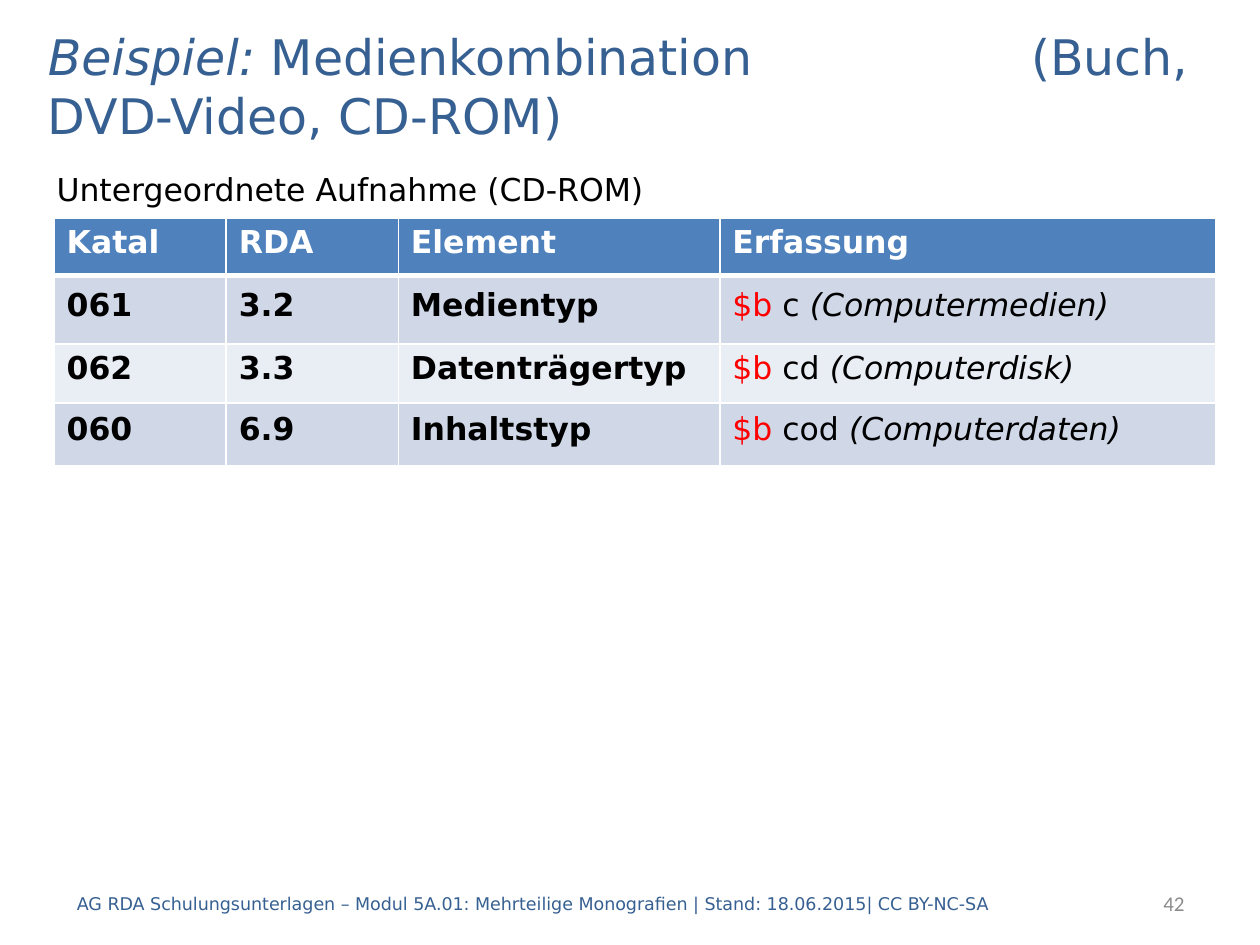
from dataclasses import dataclass

from lxml.etree import SubElement
from pptx import Presentation
from pptx.dml.color import RGBColor
from pptx.enum.shapes import MSO_SHAPE as ShapeKind
from pptx.enum.text import MSO_ANCHOR as Anchor, PP_ALIGN as Align
from pptx.oxml.ns import qn
from pptx.util import Cm, Pt

COLORS = {
    "title": "376092",
    "number": "8C8C8C",
    "header": "4F81BD",
    "odd_row": "D0D8E8",
    "even_row": "E9EDF4",
    "white": "FFFFFF",
    "black": "000000",
    "subfield": "FF0000",
}
TITLE_TAB = Cm(19.82)
COLUMN_WIDTHS = (3.47, 3.47, 6.48, 10)
ROW_HEIGHTS = (1.17, 1.37, 1.19, 1.27)
HEADERS = ("Katal", "RDA", "Element", "Erfassung")


@dataclass(frozen=True)
class TextRun:
    text: str
    color: str = "black"
    size: float = 18
    bold: bool = False
    italic: bool = False
    font: str = "DejaVu Sans"


@dataclass(frozen=True)
class Label:
    run: TextRun
    box: tuple[float, float, float, float]
    anchor: Anchor = Anchor.MIDDLE
    align: Align = Align.LEFT
    fill: str | None = None


@dataclass(frozen=True)
class Entry:
    field: str
    rule: str
    element: str
    code: str
    meaning: str


LABELS = (
    Label(TextRun("AG RDA Schulungsunterlagen – Modul 5A.01: Mehrteilige Monografien"
                  " | Stand: 18.06.2015| CC BY-NC-SA", "title", 10),
          (1.3, 17.7, 21.21, 1.02)),
    Label(TextRun("42", "number", 12, font="Calibri"),
          (20.09, 17.7, 4.04, 1.02), align=Align.RIGHT),
    Label(TextRun("Untergeordnete Aufnahme (CD-ROM)"),
          (0.89, 3.3, 13.61, 1.02), anchor=Anchor.TOP, fill="white"),
)
ENTRIES = (
    Entry("061", "3.2", "Medientyp", "c", "(Computermedien)"),
    Entry("062", "3.3", "Datenträgertyp", "cd", "(Computerdisk)"),
    Entry("060", "6.9", "Inhaltstyp", "cod", "(Computerdaten)"),
)


def rgb(name: str) -> RGBColor:
    return RGBColor.from_string(COLORS[name])


def set_attributes(target, values: dict) -> None:
    for name, value in values.items():
        setattr(target, name, value)


def add_runs(paragraph, runs) -> None:
    for item in runs:
        run = paragraph.add_run()
        run.text = item.text
        set_attributes(run.font, {"name": item.font, "size": Pt(item.size),
                                  "bold": item.bold, "italic": item.italic})
        run.font.color.rgb = rgb(item.color)


def add_label(slide, label: Label) -> None:
    """Add a text box, or a rectangle when the label has a fill."""
    box = map(Cm, label.box)
    if label.fill:
        shape = slide.shapes.add_shape(ShapeKind.RECTANGLE, *box)
        shape.shadow.inherit = False
        shape.fill.solid()
        shape.fill.fore_color.rgb = rgb(label.fill)
        shape.line.fill.background()
    else:
        shape = slide.shapes.add_textbox(*box)
    set_attributes(shape.text_frame, {"word_wrap": True, "vertical_anchor": label.anchor})
    paragraph = shape.text_frame.paragraphs[0]
    paragraph.alignment = label.align
    add_runs(paragraph, [label.run])


def fill_title(slide) -> None:
    title = slide.shapes.title
    set_attributes(title, {"left": Cm(0.71), "top": Cm(0.51),
                           "width": Cm(24), "height": Cm(2.41)})
    title.text_frame.vertical_anchor = Anchor.MIDDLE
    paragraph = title.text_frame.paragraphs[0]
    paragraph.alignment = Align.LEFT
    tabs = SubElement(paragraph._p.get_or_add_pPr(), qn("a:tabLst"))
    SubElement(tabs, qn("a:tab"), pos=str(TITLE_TAB), algn="l")
    add_runs(paragraph, [
        TextRun("Beispiel: ", "title", 28, italic=True),
        TextRun("Medienkombination\t(Buch, DVD-Video, CD-ROM)", "title", 28),
    ])


def add_borders(cell, top: float, bottom: float) -> None:
    """Draw white cell borders; call before the fill, which must follow them."""
    properties = cell._tc.get_or_add_tcPr()
    for side, width in (("L", 1), ("R", 1), ("T", top), ("B", bottom)):
        line = SubElement(properties, qn(f"a:ln{side}"), w=str(Pt(width)))
        fill = SubElement(line, qn("a:solidFill"))
        SubElement(fill, qn("a:srgbClr"), val=COLORS["white"])


def entry_cells(entry: Entry) -> list[list[TextRun]]:
    keys = [[TextRun(text, bold=True)] for text in (entry.field, entry.rule, entry.element)]
    return keys + [[TextRun("$b", "subfield"), TextRun(f" {entry.code} "),
                    TextRun(entry.meaning, italic=True)]]


def add_entry_table(slide) -> None:
    rows = [[[TextRun(text, "white", bold=True)] for text in HEADERS]]
    rows += [entry_cells(entry) for entry in ENTRIES]
    table = slide.shapes.add_table(
        len(rows), len(HEADERS), Cm(1.09), Cm(4.39),
        Cm(sum(COLUMN_WIDTHS)), Cm(sum(ROW_HEIGHTS))).table
    for column, width in zip(table.columns, COLUMN_WIDTHS):
        column.width = Cm(width)
    for index, (row, height, contents) in enumerate(zip(table.rows, ROW_HEIGHTS, rows)):
        row.height = Cm(height)
        is_header = index == 0
        color = "header" if is_header else "odd_row" if index % 2 else "even_row"
        for cell, runs in zip(row.cells, contents):
            add_borders(cell, top=3 if index == 1 else 1, bottom=3 if is_header else 1)
            cell.fill.solid()
            cell.fill.fore_color.rgb = rgb(color)
            paragraph = cell.text_frame.paragraphs[0]
            if not is_header:
                cell.vertical_anchor = Anchor.MIDDLE
                set_attributes(paragraph, {"line_spacing": Pt(16), "space_before": Pt(6),
                                           "space_after": Pt(6)})
            add_runs(paragraph, runs)


def main() -> None:
    presentation = Presentation()
    set_attributes(presentation, {"slide_width": Cm(25.4), "slide_height": Cm(19.05)})
    slide = presentation.slides.add_slide(presentation.slide_layouts.get_by_name("Title Only"))
    fill_title(slide)
    add_entry_table(slide)
    for label in LABELS:
        add_label(slide, label)
    presentation.save("out.pptx")


if __name__ == "__main__":
    main()
